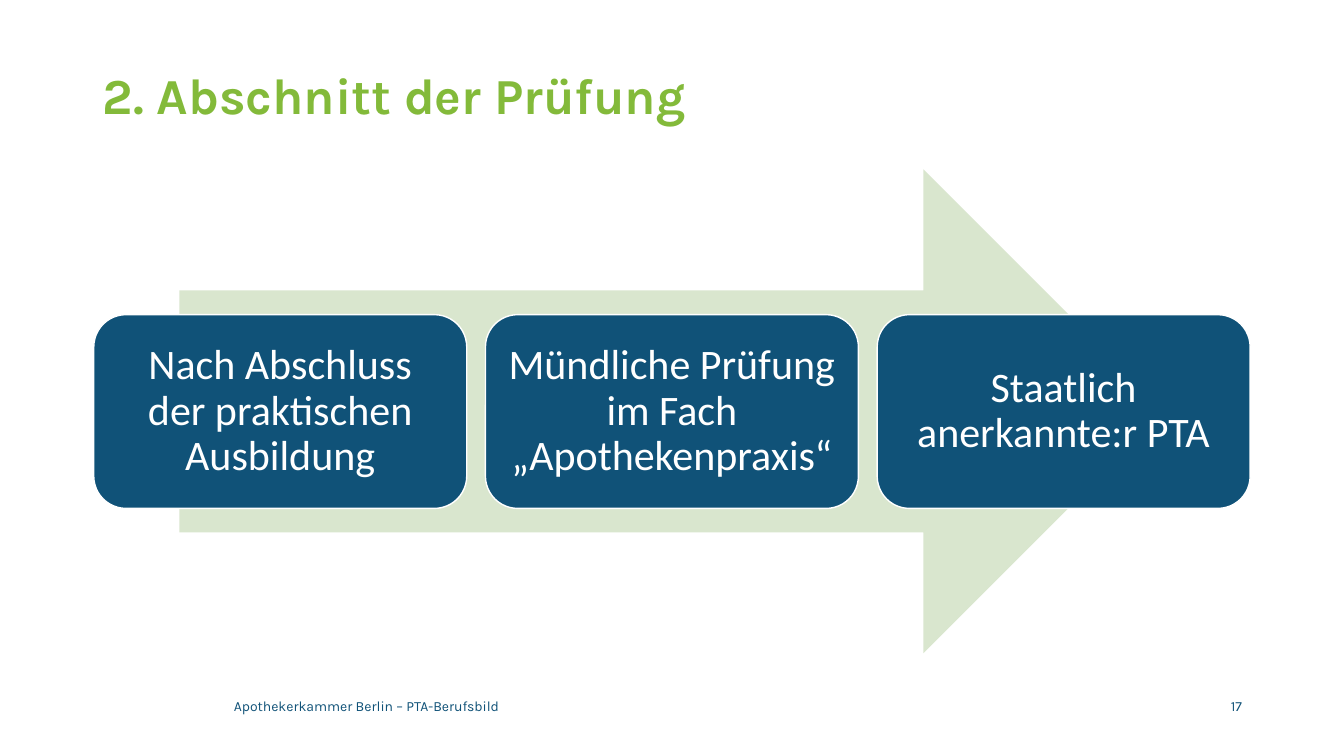
from typing import NamedTuple

from pptx import Presentation
from pptx.dml.color import RGBColor
from pptx.enum.shapes import MSO_SHAPE as Preset
from pptx.enum.text import MSO_ANCHOR as Anchor, PP_ALIGN as Align
from pptx.shapes.autoshape import Shape
from pptx.slide import Slide
from pptx.util import Pt

COLORS = {"navy": "105278", "green": "83BA3A", "pale": "D9E6CE", "white": "FFFFFF"}

STEPS = [
    "Nach Abschluss der praktischen Ausbildung",
    "Mündliche Prüfung im Fach „Apothekenpraxis“",
    "Staatlich anerkannte:r PTA",
]
STEP_WIDTH, STEP_GAP = 266.4, 13.4


class Area(NamedTuple):
    left: float
    top: float
    width: float
    height: float

    def lengths(self) -> list[Pt]:
        return [Pt(value) for value in self]


class Label(NamedTuple):
    text: str
    area: Area
    size: float
    color: str = "navy"
    bold: bool = False
    align: Align = Align.LEFT
    line_spacing: float = 1.0


FIRST_STEP = Area(67, 224.8, STEP_WIDTH, 138.4)
ARROW = Area(128.2, 121, 704.2, 345.6)
LABELS = [
    Label("2. Abschnitt der Prüfung", Area(66.2, 28.8, 828, 82), 36, "green",
          bold=True, line_spacing=0.9),
    Label("Apothekerkammer Berlin – PTA-Berufsbild", Area(160, 489.6, 627, 28.8), 10),
    Label("17", Area(790.6, 489.6, 103.6, 28.8), 10, align=Align.RIGHT),
]


def rgb(name: str) -> RGBColor:
    return RGBColor.from_string(COLORS[name])


def write(box: Shape, text: str, *, size: float, color: str, font: str = "Karla",
          bold: bool = False, align: Align = Align.LEFT,
          line_spacing: float = 1.0) -> None:
    frame = box.text_frame
    frame.word_wrap = True
    frame.vertical_anchor = Anchor.MIDDLE
    para = frame.paragraphs[0]
    para.alignment = align
    para.line_spacing = line_spacing
    span = para.add_run()
    span.text = text
    span.font.name = font
    span.font.size = Pt(size)
    span.font.bold = bold
    span.font.color.rgb = rgb(color)


def add_label(page: Slide, label: Label) -> None:
    box = page.shapes.add_textbox(*label.area.lengths())
    write(box, label.text, size=label.size, color=label.color, bold=label.bold,
          align=label.align, line_spacing=label.line_spacing)


def add_filled(page: Slide, preset: Preset, area: Area, color: str) -> Shape:
    shape = page.shapes.add_shape(preset, *area.lengths())
    shape.shadow.inherit = False
    shape.fill.solid()
    shape.fill.fore_color.rgb = rgb(color)
    shape.line.fill.background()
    return shape


def add_step(page: Slide, index: int, text: str) -> None:
    left = FIRST_STEP.left + index * (STEP_WIDTH + STEP_GAP)
    box = add_filled(page, Preset.ROUNDED_RECTANGLE, FIRST_STEP._replace(left=left), "navy")
    box.line.color.rgb = rgb("white")
    box.line.width = Pt(1)
    frame = box.text_frame
    frame.margin_left = frame.margin_right = Pt(8.6)
    frame.margin_top = frame.margin_bottom = Pt(8.6)
    write(box, text, size=30, color="white", font="Calibri",
          align=Align.CENTER, line_spacing=0.9)


def main() -> None:
    deck = Presentation()
    deck.slide_width, deck.slide_height = Pt(960), Pt(540)
    page = deck.slides.add_slide(deck.slide_layouts[6])
    add_filled(page, Preset.RIGHT_ARROW, ARROW, "pale")
    for index, text in enumerate(STEPS):
        add_step(page, index, text)
    for label in LABELS:
        add_label(page, label)
    deck.save("out.pptx")


if __name__ == "__main__":
    main()
